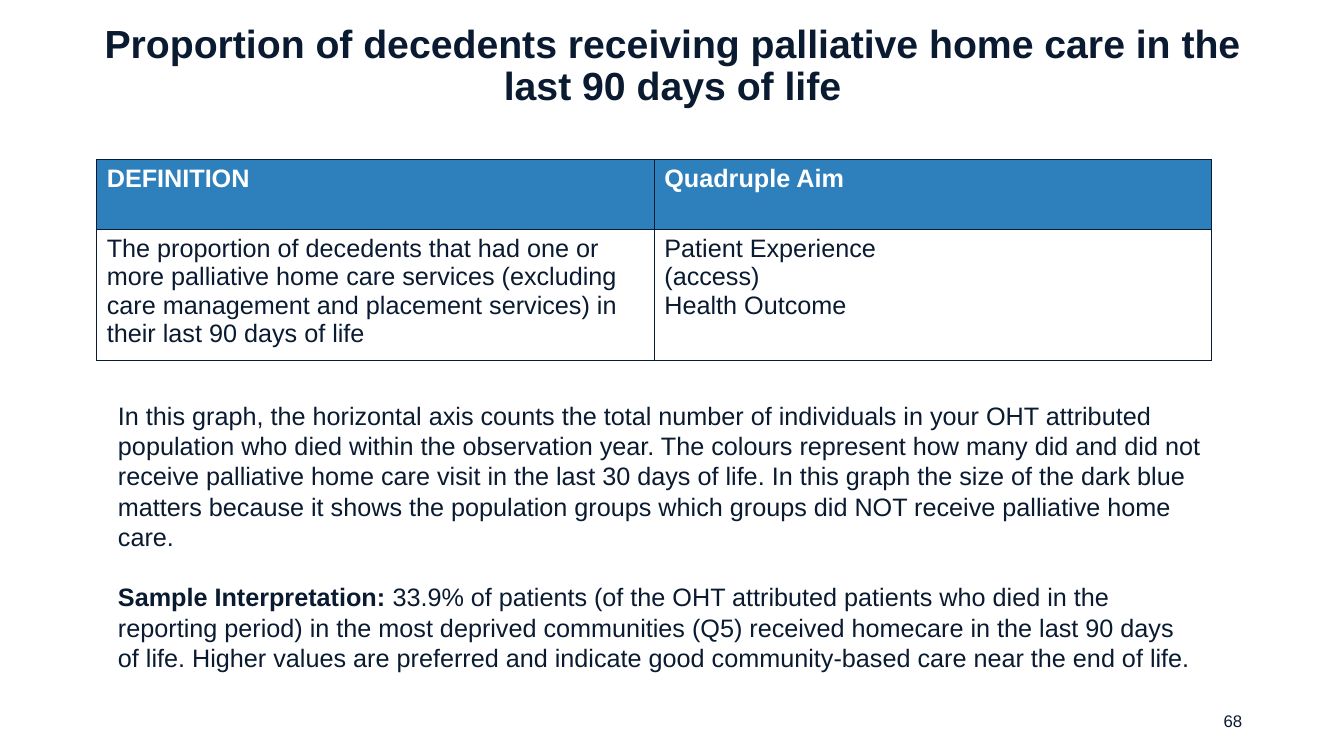
from lxml.etree import SubElement
from pptx import Presentation
from pptx.dml.color import RGBColor
from pptx.enum.text import MSO_ANCHOR, MSO_AUTO_SIZE, PP_ALIGN
from pptx.oxml.ns import qn
from pptx.util import Inches, Pt

COLORS = {"ink": "0A1A31", "header": "2E80BC", "white": "FFFFFF"}

TITLE = "Proportion of decedents receiving palliative home care in the last 90 days of life"
TABLE_ROWS = [
    [["DEFINITION"], ["Quadruple Aim"]],
    [
        ["The proportion of decedents that had one or more palliative home care services "
         "(excluding care management and placement services) in their last 90 days of life"],
        ["Patient Experience\v(access)", "Health Outcome"],
    ],
]
ROW_HEIGHTS = [0.7, 1.3]
EXPLANATION = [
    [("In this graph, the horizontal axis counts the total number of individuals in your OHT "
      "attributed population who died within the observation year. The colours represent how "
      "many did and did not receive palliative home care visit in the last 30 days of life. "
      "In this graph the size of the dark blue matters because it shows the population groups "
      "which groups did NOT receive palliative home care.", False)],
    [("Sample Interpretation: ", True),
     ("33.9% of patients (of the OHT attributed patients who died in the reporting period) in "
      "the most deprived communities (Q5) received homecare in the last 90 days of life. Higher "
      "values are preferred and indicate good community-based care near the end of life.", False)],
]


def set_values(target, values):
    for name, value in values.items():
        setattr(target, name, value)


def style_font(font, size, color="ink", bold=False):
    set_values(font, {"name": "Arial", "size": Pt(size), "bold": bold})
    font.color.rgb = RGBColor.from_string(COLORS[color])


def place(shape, box):
    names = ("left", "top", "width", "height")
    set_values(shape, dict(zip(names, map(Inches, box))))


def set_frame(frame, anchor):
    set_values(frame, {
        "word_wrap": True,
        "auto_size": MSO_AUTO_SIZE.NONE,
        "vertical_anchor": anchor,
    })


def add_title(page, box):
    title = page.shapes.title
    place(title, box)
    set_frame(title.text_frame, MSO_ANCHOR.MIDDLE)
    para = title.text_frame.paragraphs[0]
    para.text = TITLE
    set_values(para, {"alignment": PP_ALIGN.CENTER, "line_spacing": 0.9})
    style_font(para.font, 28, bold=True)


def add_border(cell):
    properties = cell._tc.get_or_add_tcPr()
    for position, side in enumerate(("lnL", "lnR", "lnT", "lnB")):
        line = properties.makeelement(qn(f"a:{side}"), {"w": str(Pt(1))})
        fill = SubElement(line, qn("a:solidFill"))
        SubElement(fill, qn("a:srgbClr"), {"val": COLORS["ink"]})
        properties.insert(position, line)


def fill_cell(cell, lines, is_header):
    cell.fill.solid()
    cell.fill.fore_color.rgb = RGBColor.from_string(COLORS["header" if is_header else "white"])
    add_border(cell)
    frame = cell.text_frame
    for index, line in enumerate(lines):
        para = frame.add_paragraph() if index else frame.paragraphs[0]
        para.text = line
        for span in para.runs:
            style_font(span.font, 18, "white" if is_header else "ink", is_header)


def add_definition_table(page, box):
    table = page.shapes.add_table(len(TABLE_ROWS), 2, *map(Inches, box)).table
    set_values(table, {"first_row": False, "horz_banding": False})
    for row, height, contents in zip(table.rows, ROW_HEIGHTS, TABLE_ROWS):
        row.height = Inches(height)
        for cell, lines in zip(row.cells, contents):
            fill_cell(cell, lines, contents is TABLE_ROWS[0])


def add_explanation(page, box):
    body = page.placeholders[1]
    place(body, box)
    frame = body.text_frame
    set_frame(frame, MSO_ANCHOR.TOP)
    for index, spans in enumerate(EXPLANATION):
        para = frame.add_paragraph() if index else frame.paragraphs[0]
        properties = para._p.get_or_add_pPr()
        for name in ("marL", "indent"):
            properties.set(name, "0")
        SubElement(properties, qn("a:buNone"))
        set_values(para, {
            "alignment": PP_ALIGN.LEFT,
            "line_spacing": 1.0,
            "space_before": Pt(21.7 * index),
        })
        for text, bold in spans:
            span = para.add_run()
            span.text = text
            style_font(span.font, 18, bold=bold)


def add_page_number(page, box):
    frame = page.shapes.add_textbox(*map(Inches, box)).text_frame
    set_frame(frame, MSO_ANCHOR.MIDDLE)
    para = frame.paragraphs[0]
    para.text = "68"
    para.alignment = PP_ALIGN.RIGHT
    style_font(para.runs[0].font, 12)


def main():
    deck = Presentation()
    set_values(deck, {"slide_width": Inches(13.33), "slide_height": Inches(7.5)})
    page = deck.slides.add_slide(deck.slide_layouts[1])
    add_title(page, (0.77, 0.24, 11.8, 0.84))
    add_definition_table(page, (0.96, 1.58, 11.06, sum(ROW_HEIGHTS)))
    add_explanation(page, (1.07, 3.92, 10.95, 2.83))
    add_page_number(page, (9.42, 6.95, 3, 0.4))
    deck.save("out.pptx")


if __name__ == "__main__":
    main()
